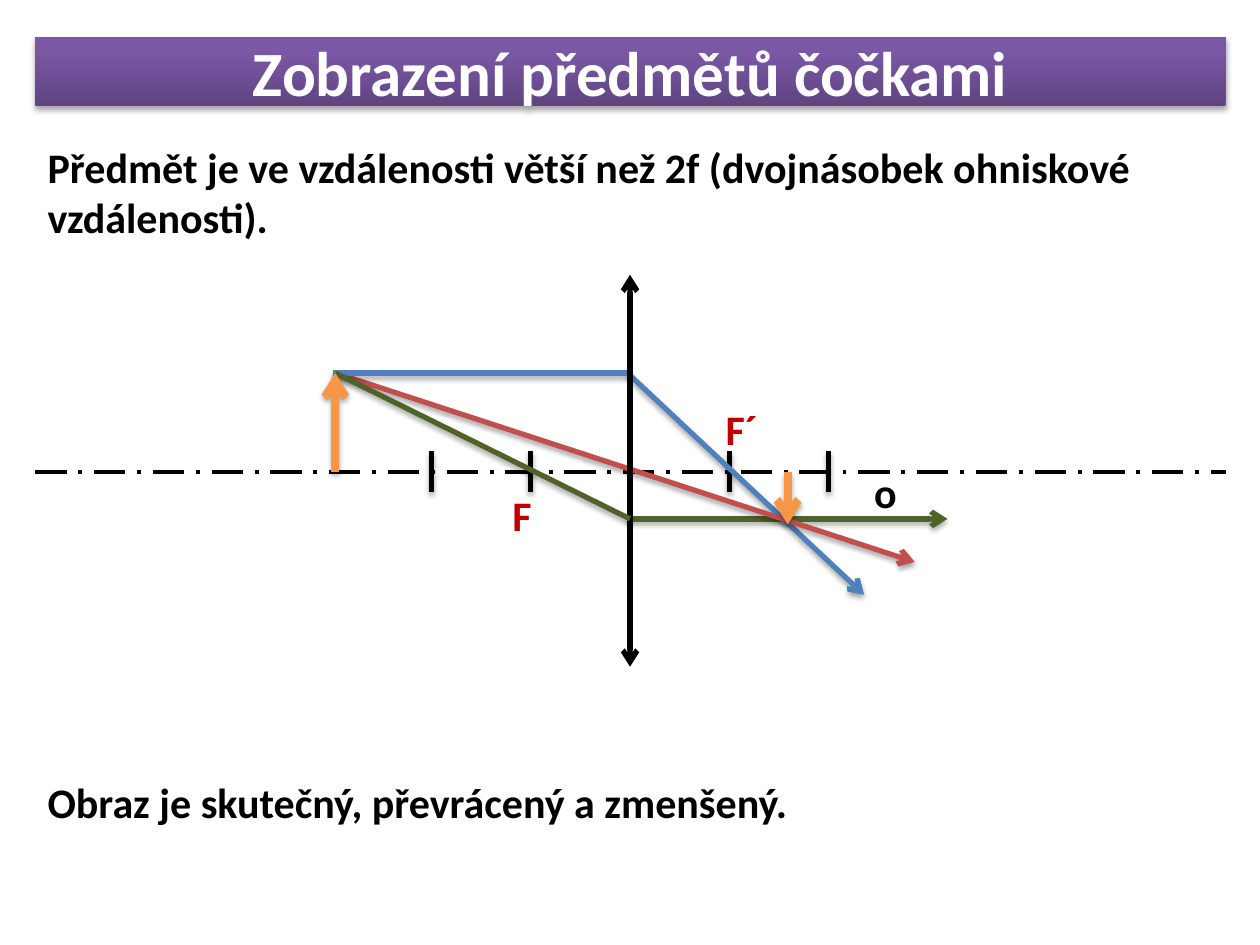
from dataclasses import dataclass

from lxml.etree import SubElement
from pptx import Presentation
from pptx.dml.color import RGBColor
from pptx.enum.dml import MSO_LINE
from pptx.enum.shapes import MSO_CONNECTOR, MSO_SHAPE
from pptx.enum.text import MSO_ANCHOR, MSO_AUTO_SIZE, PP_ALIGN
from pptx.oxml import parse_xml
from pptx.oxml.ns import nsdecls, qn
from pptx.util import Cm, Pt


@dataclass(frozen=True)
class Theme:
    font: str = "Calibri"
    title_size: int = 36
    body_size: int = 24
    white: str = "FFFFFF"
    black: str = "000000"
    label: str = "C00000"
    green: str = "4F6228"
    blue: str = "4F81BD"
    red: str = "C0504D"
    orange: str = "F79646"
    banner: tuple = ((0, "5F4480"), (80, "7B58A6"), (100, "7C57A8"))


@dataclass(frozen=True)
class Line:
    start: tuple[float, float]
    end: tuple[float, float]
    color: str
    width: float = 3
    head: bool = False
    tail: bool = False
    shadow: bool = True
    dash: MSO_LINE | None = None


@dataclass(frozen=True)
class Text:
    words: str
    left: float
    top: float
    width: float = 1.3
    height: float = 1.27
    color: str = "000000"


THEME = Theme()

# Optical layout, in centimetres
LEFT, WIDTH = 0.71, 24.0
LENS_X, AXIS_Y, FOCAL = 12.7, 9.52, 2.0
OBJECT_X, OBJECT_Y = 6.76, 7.52
IMAGE_X, IMAGE_Y = 15.88, 10.57
RAY_X, RAY_Y = 12.65, 10.46


def add_shadow(properties, visible: bool = True) -> None:
    effects = SubElement(properties, qn("a:effectLst"))
    if visible:
        effects.append(parse_xml(
            f'<a:outerShdw {nsdecls("a")} blurRad="40000" dist="23000" dir="5400000" '
            f'rotWithShape="0"><a:srgbClr val="{THEME.black}"><a:alpha val="35000"/>'
            '</a:srgbClr></a:outerShdw>'))


def add_span(para, words: str, size: int, color: str) -> None:
    span = para.add_run()
    span.text = words
    span.font.name = THEME.font
    span.font.size = Pt(size)
    span.font.bold = True
    span.font.color.rgb = RGBColor.from_string(color)


def add_banner(page, words: str) -> None:
    box = page.shapes.add_shape(MSO_SHAPE.RECTANGLE, Cm(LEFT), Cm(0.74), Cm(WIDTH), Cm(1.4))
    box.fill.background()
    box.line.fill.background()
    stops = "".join(f'<a:gs pos="{position * 1000}"><a:srgbClr val="{color}"/></a:gs>'
                    for position, color in THEME.banner)
    gradient = parse_xml(f'<a:gradFill {nsdecls("a")} rotWithShape="1"><a:gsLst>{stops}'
                         '</a:gsLst><a:lin ang="16200000" scaled="0"/></a:gradFill>')
    properties = box.element.spPr
    properties.replace(properties.find(qn("a:noFill")), gradient)
    add_shadow(properties)
    box.text_frame.word_wrap = True
    box.text_frame.vertical_anchor = MSO_ANCHOR.MIDDLE
    para = box.text_frame.paragraphs[0]
    para.alignment = PP_ALIGN.CENTER
    add_span(para, words, THEME.title_size, THEME.white)


def add_text(page, text: Text) -> None:
    box = page.shapes.add_textbox(Cm(text.left), Cm(text.top), Cm(text.width), Cm(text.height))
    box.text_frame.word_wrap = True
    box.text_frame.auto_size = MSO_AUTO_SIZE.SHAPE_TO_FIT_TEXT
    add_span(box.text_frame.paragraphs[0], text.words, THEME.body_size, text.color)


def add_line(page, line: Line) -> None:
    connector = page.shapes.add_connector(
        MSO_CONNECTOR.STRAIGHT, *(Cm(value) for value in line.start + line.end))
    connector.line.width = Pt(line.width)
    connector.line.color.rgb = RGBColor.from_string(line.color)
    if line.dash:
        connector.line.dash_style = line.dash
    properties = connector.element.spPr
    outline = properties.find(qn("a:ln"))
    for wanted, tag in ((line.head, "a:headEnd"), (line.tail, "a:tailEnd")):
        if wanted:
            SubElement(outline, qn(tag)).set("type", "arrow")
    add_shadow(properties, line.shadow)


def tick(focal_lengths: int) -> Line:
    x = LENS_X + focal_lengths * FOCAL
    return Line((x, 9.1), (x, 9.92), THEME.black)


def main() -> None:
    deck = Presentation()
    deck.slide_width, deck.slide_height = Cm(25.4), Cm(19.05)
    page = deck.slides.add_slide(deck.slide_layouts[6])

    # Heading
    add_banner(page, "Zobrazení předmětů čočkami")

    # Statement, ray diagram and conclusion, from back to front
    tip = (OBJECT_X, OBJECT_Y)
    parts = [
        Text("Předmět je ve vzdálenosti větší než 2f (dvojnásobek ohniskové vzdálenosti).",
             LEFT, 2.72, WIDTH, 2.31),
        Line((LEFT, AXIS_Y), (LEFT + WIDTH, AXIS_Y), THEME.black, 2.25,
             shadow=False, dash=MSO_LINE.LONG_DASH_DOT),
        tick(1),
        Text("F", 10.08, 9.75, color=THEME.label),
        # Rays behind the lens
        Line((RAY_X, RAY_Y), (19.1, RAY_Y), THEME.green, tail=True),
        Line((RAY_X, OBJECT_Y), (17.42, 11.99), THEME.blue, tail=True),
        Line(tip, (18.44, 11.33), THEME.red, tail=True),
        Text("o", 17.37, 9.27),
        Line((6.71, OBJECT_Y), (LENS_X, OBJECT_Y), THEME.blue),
        # Lens
        Line((LENS_X, 13.44), (LENS_X, 5.54), THEME.black, head=True, tail=True, shadow=False),
        Text("F´", 14.38, 8.0, color=THEME.label),
        tick(-1),
        Line(tip, (LENS_X, RAY_Y), THEME.green),
        # Object and its image
        Line((OBJECT_X, AXIS_Y), tip, THEME.orange, 4.5, tail=True),
        tick(-2),
        tick(2),
        Line((IMAGE_X, AXIS_Y), (IMAGE_X, IMAGE_Y), THEME.orange, 4.5, tail=True),
        Text("Obraz je skutečný, převrácený a zmenšený.", LEFT, 15.52, WIDTH),
    ]
    for part in parts:
        if isinstance(part, Text):
            add_text(page, part)
        else:
            add_line(page, part)

    deck.save("out.pptx")


if __name__ == "__main__":
    main()
